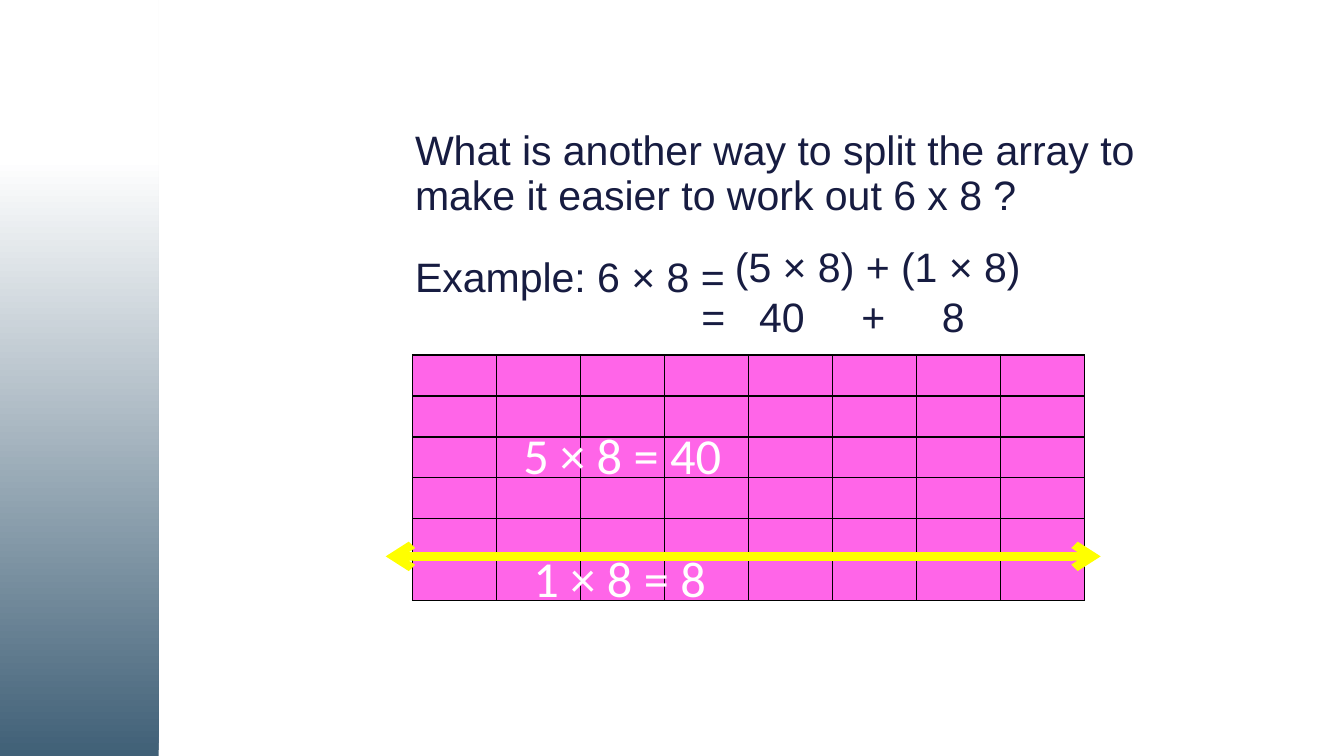
from dataclasses import dataclass

from lxml.etree import SubElement
from pptx import Presentation
from pptx.dml.color import RGBColor
from pptx.enum.shapes import MSO_CONNECTOR, MSO_SHAPE
from pptx.enum.text import PP_ALIGN
from pptx.oxml.ns import qn
from pptx.util import Inches, Pt


@dataclass(frozen=True)
class Theme:
    """Colours, fonts and sizes of the slide."""
    ink: str = "171C41"
    steel: str = "406077"
    white: str = "FFFFFF"
    pink: str = "FF65E8"
    black: str = "000000"
    navy: str = "002060"
    yellow: str = "FFFF00"
    body: str = "Arial"
    label: str = "Calibri"
    text: int = 22
    sum: int = 27


THEME = Theme()
WIDTH = 10
HEIGHT = WIDTH * 9 / 16


def rgb(code):
    """Turn a hex code into a colour."""
    return RGBColor.from_string(code)


def add_text(slide, box, lines, face, size, tint, align=PP_ALIGN.LEFT):
    """Add a wrapped text box and return its paragraphs."""
    frame = slide.shapes.add_textbox(*map(Inches, box)).text_frame
    frame.word_wrap = True
    frame.text = "\n".join(lines)
    for para in frame.paragraphs:
        para.alignment = align
        for run in para.runs:
            run.font.name = face
            run.font.size = Pt(size)
            run.font.color.rgb = rgb(tint)
    return frame.paragraphs


def add_side(slide, box):
    """Draw the fading band at the left edge."""
    band = slide.shapes.add_shape(MSO_SHAPE.RECTANGLE, *map(Inches, box))
    band.shadow.inherit = False
    band.line.fill.background()
    band.fill.gradient()
    band.fill.gradient_angle = 90
    low, high = band.fill.gradient_stops
    low.color.rgb, low.position = rgb(THEME.steel), 0
    high.color.rgb, high.position = rgb(THEME.white), 0.79


def add_task(slide, box):
    """Write the question and the start of the example."""
    lines = ("What is another way to split the array to make it easier "
             "to work out 6 x 8 ?", "Example: 6 × 8 =")
    paras = add_text(slide, box, lines, THEME.body, THEME.text, THEME.ink)
    for para, pitch, gap in zip(paras, (0.9, 1.2), (0, 6)):
        para.line_spacing = pitch
        para.space_before = Pt(gap)
        para.space_after = Pt(6)


def add_answer(slide, box):
    """Write the split sum with its values set on tab stops."""
    lines = ("(5 × 8) + (1 × 8)", "=\t40\t+\t8")
    first, last = add_text(slide, box, lines, THEME.body, THEME.text, THEME.ink)
    first._p.get_or_add_pPr().set("marL", str(Inches(0.25)))
    tabs = SubElement(last._p.get_or_add_pPr(), qn("a:tabLst"))
    for stop in (0.43, 1.19, 1.79):
        SubElement(tabs, qn("a:tab"), pos=str(Inches(stop)), algn="l")


def add_edge(cell, side, tint):
    """Give one side of a cell a thin line."""
    edge = SubElement(cell._tc.get_or_add_tcPr(), qn("a:" + side), w=str(Pt(1)))
    fill = SubElement(edge, qn("a:solidFill"))
    SubElement(fill, qn("a:srgbClr"), val=tint)


def add_grid(slide, box, rows=6, cols=8, split=5):
    """Draw the array as a table split below a given row."""
    table = slide.shapes.add_table(rows, cols, *map(Inches, box)).table
    table.first_row = table.horz_banding = False
    for row, line in enumerate(table.rows):
        top = THEME.navy if row == split else THEME.black
        base = THEME.navy if row == split - 1 else THEME.black
        tints = {"lnL": THEME.black, "lnR": THEME.black, "lnT": top, "lnB": base}
        for cell in line.cells:
            cell.margin_top = cell.margin_bottom = 0
            SubElement(cell.text_frame.paragraphs[0]._p, qn("a:endParaRPr"), sz="800")
            for side, tint in tints.items():
                add_edge(cell, side, tint)
            cell.fill.solid()
            cell.fill.fore_color.rgb = rgb(THEME.pink)


def add_split(slide, box):
    """Draw the double arrow that splits the array."""
    left, top, width, _ = box
    ends = map(Inches, (left + width, top, left, top))
    arrow = slide.shapes.add_connector(MSO_CONNECTOR.STRAIGHT, *ends)
    arrow.line.color.rgb = rgb(THEME.yellow)
    arrow.line.width = Pt(4.5)
    line = arrow.line._get_or_add_ln()
    for end in ("a:headEnd", "a:tailEnd"):
        SubElement(line, qn(end), type="arrow")
    SubElement(arrow._element.spPr, qn("a:effectLst"))


def add_array(slide, box):
    """Place the grid, its two sums and the split arrow."""
    left, top, width, height = box
    add_grid(slide, box)
    for text, dx, dy in (("5 × 8 = 40", 0.65, 0.47), ("1 × 8 = 8", 0.63, 1.38)):
        add_text(slide, (left + dx, top + dy, 1.82, 0.56), [text], THEME.label,
                 THEME.sum, THEME.white, PP_ALIGN.CENTER)
    add_split(slide, (left - 0.2, top + 1.5, width + 0.32, 0))


def main():
    """Build and save the slide."""
    deck = Presentation()
    deck.slide_width, deck.slide_height = Inches(WIDTH), Inches(HEIGHT)
    slide = deck.slides.add_slide(deck.slide_layouts[6])
    add_side(slide, (0, 0, 1.18, HEIGHT))
    add_task(slide, (2.99, 0.92, 5.67, 3.7))
    add_array(slide, (3.07, 2.64, 5, 1.83))
    add_answer(slide, (5.12, 1.75, 3.79, 0.84))
    deck.save("out.pptx")


if __name__ == "__main__":
    main()
